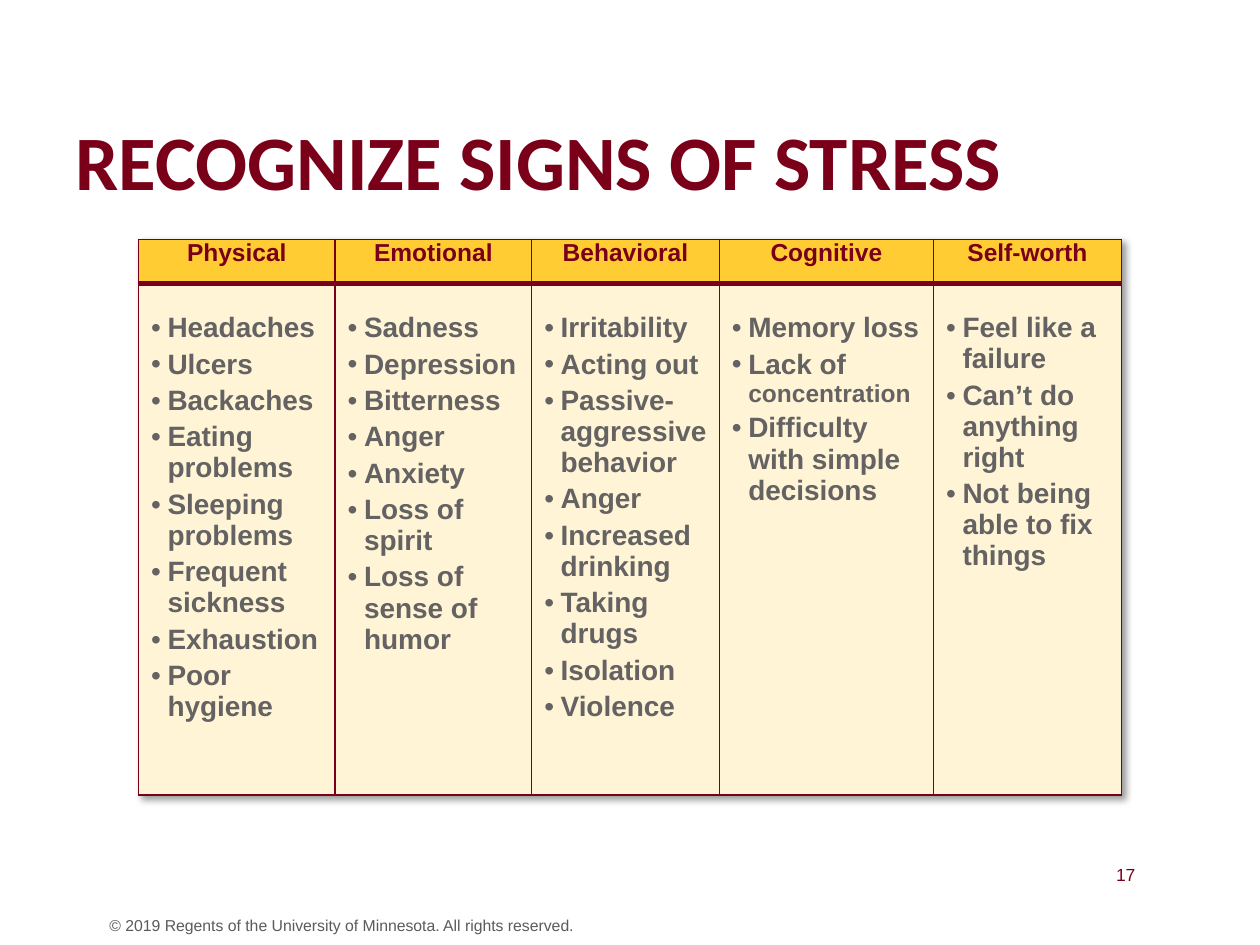
from lxml import etree
from pptx import Presentation
from pptx.dml.color import RGBColor
from pptx.enum import text
from pptx.oxml import parse_xml
from pptx.oxml.ns import nsdecls, qn
from pptx.util import Inches, Pt

COLORS = {
    "maroon": "7A0019",
    "gold": "FFCC33",
    "cream": "FFF5D6",
    "body": "646262",
    "footer": "5C5A5A",
    "shadow": "000000",
}
COLUMN_WIDTHS = [1.56, 1.56, 1.49, 1.7, 1.49]
ROW_HEIGHTS = [0.35, 4.06]
# A sign is a list of (wording, size) runs or plain wording at the usual size.
SIGNS = {
    "Physical": ["Headaches", "Ulcers", "Backaches", "Eating problems",
                 "Sleeping problems", "Frequent sickness", "Exhaustion",
                 "Poor hygiene"],
    "Emotional": ["Sadness", "Depression", "Bitterness", "Anger", "Anxiety",
                  "Loss of spirit", "Loss of sense of humor"],
    "Behavioral": ["Irritability", "Acting out", "Passive-aggressive behavior",
                   "Anger", "Increased drinking", "Taking drugs", "Isolation",
                   "Violence"],
    "Cognitive": ["Memory loss", [("Lack of ", 16), ("concentration", 14)],
                  "Difficulty with simple decisions"],
    "Self-worth": ["Feel like a failure", "Can’t do anything right",
                   "Not being able to fix things"],
}


def rgb(name):
    return RGBColor.from_string(COLORS[name])


def add_run(p, wording, size, color, bold=False, font="Arial"):
    r = p.add_run()
    r.text = wording
    r.font.name = font
    r.font.size = Pt(size)
    r.font.bold = bold
    r.font.color.rgb = rgb(color)


def add_text(s, box, wording, size, color, align=text.PP_ALIGN.LEFT,
             margin_top=0.05, **style):
    tf = s.shapes.add_textbox(*map(Inches, box)).text_frame
    tf.word_wrap = True
    tf.margin_top = Inches(margin_top)
    p = tf.paragraphs[0]
    p.alignment = align
    add_run(p, wording, size, color, **style)


def set_bullet(p):
    """Give the paragraph a hanging round bullet."""
    pPr = p._p.get_or_add_pPr()
    pPr.set("marL", str(Inches(0.13)))
    pPr.set("indent", str(-Inches(0.13)))
    etree.SubElement(pPr, qn("a:buFont")).set("typeface", "Arial")
    etree.SubElement(pPr, qn("a:buChar")).set("char", "•")


def style_cell(cell, fill, top, bottom, margin_top=0):
    """Set margins, fill and borders; top and bottom are line widths."""
    cell.margin_left = cell.margin_right = Inches(0.1)
    cell.margin_top, cell.margin_bottom = Inches(margin_top), 0
    tcPr = cell._tc.get_or_add_tcPr()
    for side, width in zip("LRTB", (1, 1, top, bottom)):
        tcPr.append(parse_xml(
            f'<a:ln{side} {nsdecls("a")} w="{Pt(width)}"><a:solidFill>'
            f'<a:srgbClr val="{COLORS["maroon"]}"/></a:solidFill></a:ln{side}>'))
    cell.fill.solid()
    cell.fill.fore_color.rgb = rgb(fill)


def fill_header(cell, heading):
    style_cell(cell, "gold", top=1, bottom=3)
    p = cell.text_frame.paragraphs[0]
    p.alignment = text.PP_ALIGN.CENTER
    p.space_after = Pt(6)
    add_run(p, heading, 14, "maroon", bold=True)


def fill_signs(cell, signs):
    style_cell(cell, "cream", top=3, bottom=1, margin_top=0.23)
    tf = cell.text_frame
    for i, sign in enumerate(signs):
        p = tf.add_paragraph() if i else tf.paragraphs[0]
        set_bullet(p)
        p.space_after = Pt(3)
        runs = [(sign, 16)] if isinstance(sign, str) else sign
        for wording, size in runs:
            add_run(p, wording, size, "body", bold=True)


def add_table_shadow(table):
    table._tbl.tblPr.insert(0, parse_xml(
        f'<a:effectLst {nsdecls("a")}><a:outerShdw blurRad="{Pt(4)}" '
        f'dist="{Pt(3)}" dir="2700000" algn="tl" rotWithShape="0">'
        f'<a:srgbClr val="{COLORS["shadow"]}"><a:alpha val="40000"/>'
        '</a:srgbClr></a:outerShdw></a:effectLst>'))


def add_signs_table(s):
    table = s.shapes.add_table(
        len(ROW_HEIGHTS), len(SIGNS), Inches(1.1), Inches(1.9),
        Inches(sum(COLUMN_WIDTHS)), Inches(sum(ROW_HEIGHTS))).table
    table.first_row = table.horz_banding = False
    add_table_shadow(table)
    for row, height in zip(table.rows, ROW_HEIGHTS):
        row.height = Inches(height)
    for i, (heading, signs) in enumerate(SIGNS.items()):
        table.columns[i].width = Inches(COLUMN_WIDTHS[i])
        fill_header(table.cell(0, i), heading)
        fill_signs(table.cell(1, i), signs)


def main():
    prs = Presentation()
    prs.slide_width, prs.slide_height = Inches(10), Inches(7.5)
    s = prs.slides.add_slide(prs.slide_layouts[6])
    add_text(s, (8.05, 6.81, 1.06, 0.27), "17", 10, "maroon",
             align=text.PP_ALIGN.RIGHT)
    add_text(s, (0.77, 7.22, 8.45, 0.25),
             "© 2019 Regents of the University of Minnesota. "
             "All rights reserved.", 9, "footer")
    add_text(s, (0.5, 0.82, 9, 0.73), "RECOGNIZE SIGNS OF STRESS", 44,
             "maroon", margin_top=0.08, bold=True, font="Calibri")
    add_signs_table(s)
    prs.save("out.pptx")


if __name__ == "__main__":
    main()
